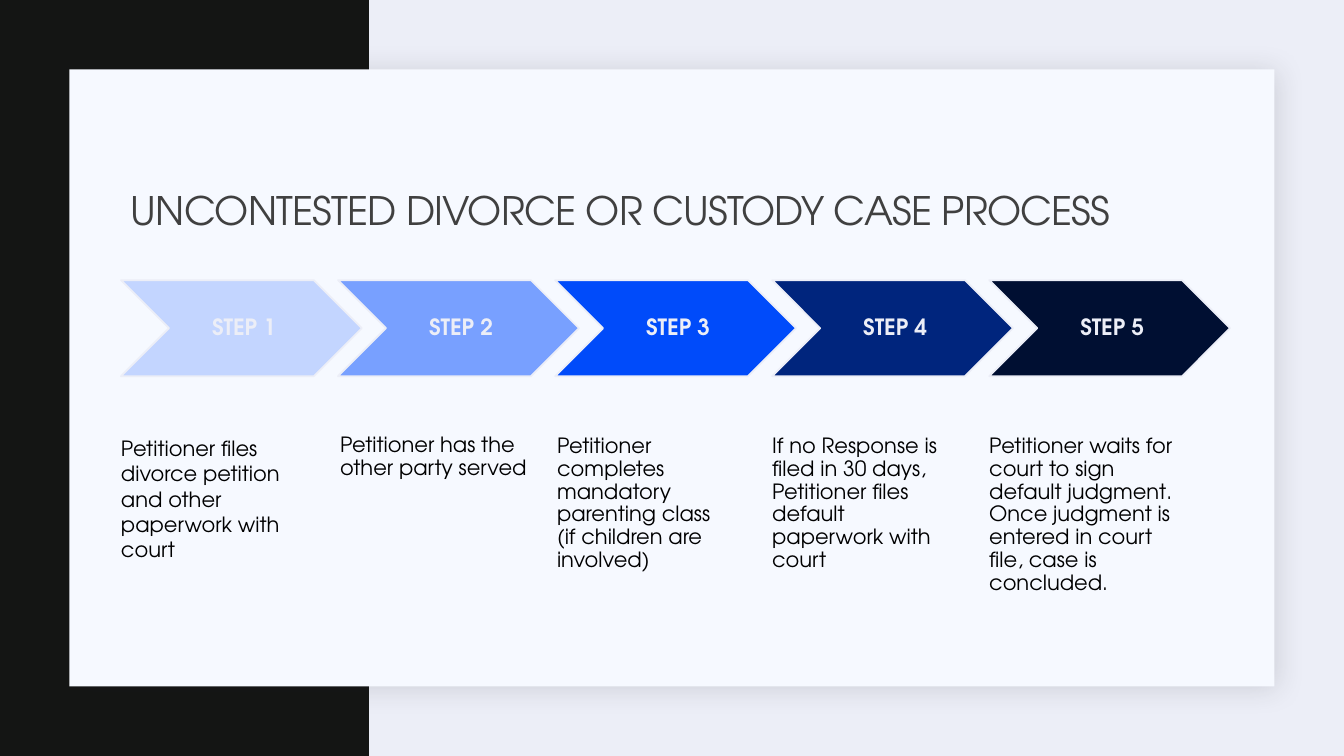
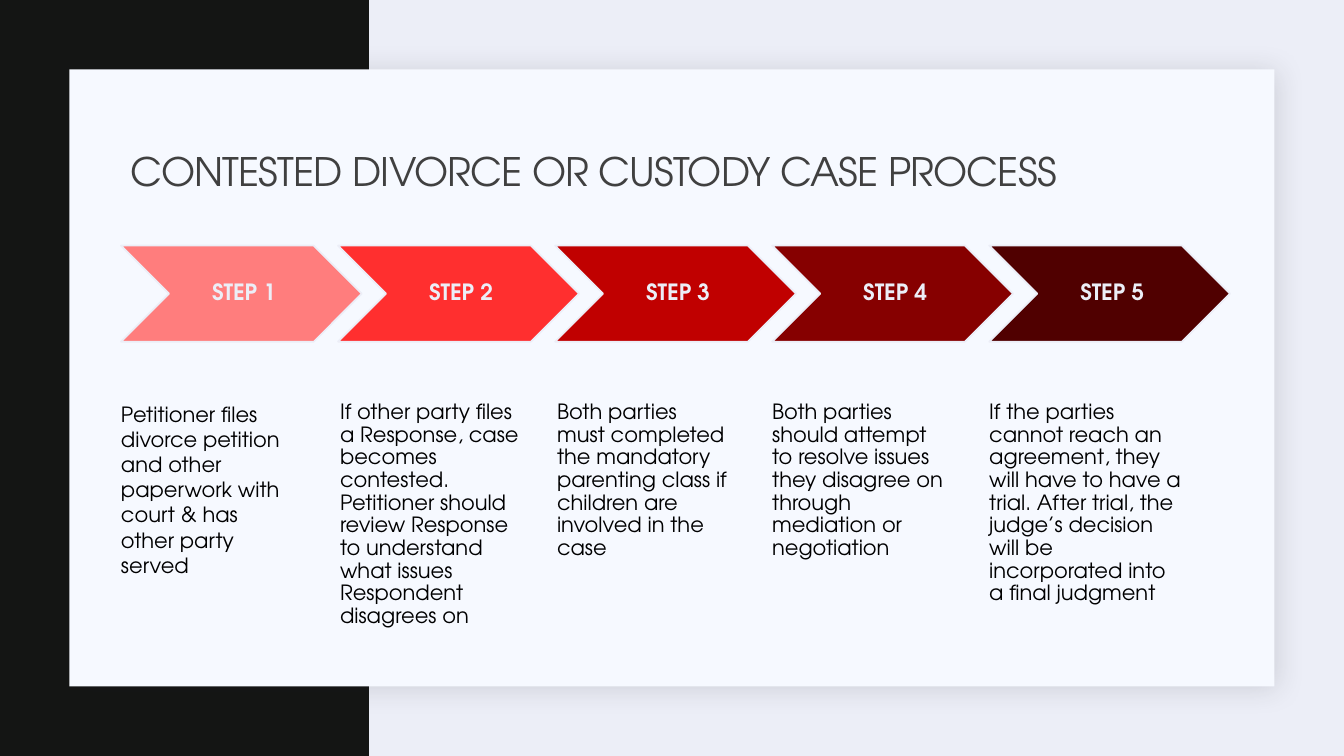
"""Build two slides showing the steps of uncontested and contested family cases."""
from lxml import etree
from pptx import Presentation
from pptx.dml.color import RGBColor
from pptx.enum import shapes, text
from pptx.oxml import ns
from pptx.util import Cm, Pt

FONT = "TeX Gyre Adventor"
BACKGROUND = RGBColor(0xEC, 0xEE, 0xF7)
BAND = RGBColor(0x14, 0x15, 0x14)
CARD = RGBColor(0xF6, 0xF9, 0xFF)
SHADOW = RGBColor(0x1F, 0x21, 0x25)
TITLE = RGBColor(0x40, 0x40, 0x40)
BODY = RGBColor(0, 0, 0)
BLUES = [RGBColor.from_string(c) for c in ("C3D5FF", "78A0FF", "004BFA", "00257D", "000F32")]
REDS = [RGBColor.from_string(c) for c in ("FF7D7D", "FF2F2F", "C00000", "860000", "500000")]

PROCESSES = [
    {
        "title": "UNCONTESTED DIVORCE OR CUSTODY CASE PROCESS",
        "title_top": 4.55,
        "steps_top": 7.06,
        "body_height": 5.31,
        "colours": BLUES,
        "steps": [
            "Petitioner files divorce petition and other paperwork with court",
            "Petitioner has the other party served",
            "Petitioner completes mandatory parenting class (if children are involved)",
            "If no Response is filed in 30 days, Petitioner files default paperwork with court",
            "Petitioner waits for court to sign default judgment. Once judgment is entered "
            "in court file, case is concluded.",
        ],
    },
    {
        "title": "CONTESTED DIVORCE OR CUSTODY CASE PROCESS",
        "title_top": 3.56,
        "steps_top": 6.19,
        "body_height": 7.06,
        "colours": REDS,
        "steps": [
            "Petitioner files divorce petition and other paperwork with court & has "
            "other party served",
            "If other party files a Response, case becomes contested. Petitioner should "
            "review Response to understand what issues Respondent disagrees on",
            "Both parties must completed the mandatory parenting class if children are "
            "involved in the case",
            "Both parties should attempt to resolve issues they disagree on through "
            "mediation or negotiation",
            "If the parties cannot reach an agreement, they will have to have a trial. "
            "After trial, the judge’s decision will be incorporated into a final judgment",
        ],
    },
]

SLIDE_WIDTH, SLIDE_HEIGHT = 33.87, 19.05
BAND_WIDTH = 9.3
CARD_MARGIN = 1.75
LEFT, PITCH = 3.05, 5.47
TITLE_WIDTH, TITLE_HEIGHT = 27.94, 1.63
CHEVRON_WIDTH, CHEVRON_HEIGHT = 6.07, 2.42
BODY_OFFSET, BODY_WIDTH, BODY_INSET = 2.73, 4.85, 1.19
COLUMN_STYLES = [
    {"line_spacing": 1.0, "left": 0, "right": 0.5},
    {"line_spacing": 0.9, "left": 0.05, "right": 0},
    {"line_spacing": 0.9, "left": 0.05, "right": 0.5},
    {"line_spacing": 0.9, "left": 0, "right": 0.5},
    {"line_spacing": 0.9, "left": 0, "right": 0},
]


def add_filled(slide, kind, box, colour):
    shape = slide.shapes.add_shape(kind, *map(Cm, box))
    shape.shadow.inherit = False
    shape.fill.solid()
    shape.fill.fore_color.rgb = colour
    shape.line.fill.background()
    return shape


def add_soft_shadow(shape):
    effects = shape._element.spPr.find(ns.qn("a:effectLst"))
    shadow = etree.SubElement(
        effects, ns.qn("a:outerShdw"), blurRad=str(Pt(20)), dist=str(Pt(2)),
        dir="2700000", algn="tl", rotWithShape="0")
    colour = etree.SubElement(shadow, ns.qn("a:srgbClr"), val=str(SHADOW))
    etree.SubElement(colour, ns.qn("a:alpha"), val="15000")


def write(shape, words, size, colour, line_spacing=0.9, insets=(0.25, 0.13, 0.25, 0.13),
          anchor=text.MSO_ANCHOR.MIDDLE, align=text.PP_ALIGN.LEFT, bold=False):
    frame = shape.text_frame
    frame.text = words
    frame.word_wrap = True
    frame.vertical_anchor = anchor
    (frame.margin_left, frame.margin_top,
     frame.margin_right, frame.margin_bottom) = map(Cm, insets)
    paragraph = frame.paragraphs[0]
    paragraph.alignment = align
    paragraph.line_spacing = line_spacing
    run = paragraph.runs[0]
    run.font.name = FONT
    run.font.size = Pt(size)
    run.font.bold = bold
    run.font.color.rgb = colour
    return run


def add_text(slide, box, *args, **style):
    return write(slide.shapes.add_textbox(*map(Cm, box)), *args, **style)


def add_frame(slide):
    rectangle = shapes.MSO_SHAPE.RECTANGLE
    add_filled(slide, rectangle, (0, 0, BAND_WIDTH, SLIDE_HEIGHT), BAND)
    card_box = (CARD_MARGIN, CARD_MARGIN,
                SLIDE_WIDTH - 2 * CARD_MARGIN, SLIDE_HEIGHT - 2 * CARD_MARGIN)
    add_soft_shadow(add_filled(slide, rectangle, card_box, CARD))


def add_step(slide, index, process):
    left = LEFT + index * PITCH
    top = process["steps_top"]
    chevron = add_filled(slide, shapes.MSO_SHAPE.CHEVRON,
                         (left, top, CHEVRON_WIDTH, CHEVRON_HEIGHT), process["colours"][index])
    chevron.line.color.rgb = BACKGROUND
    chevron.line.width = Pt(1.25)
    write(chevron, f"STEP {index + 1}", 16, BACKGROUND, insets=(0.18, 0.05, 0.05, 0.05),
          align=text.PP_ALIGN.CENTER, bold=True)
    style = COLUMN_STYLES[index]
    add_text(slide, (left, top + BODY_OFFSET, BODY_WIDTH, process["body_height"]),
             process["steps"][index], 15, BODY, line_spacing=style["line_spacing"],
             insets=(style["left"], BODY_INSET, style["right"], 0),
             anchor=text.MSO_ANCHOR.TOP)


def add_process(presentation, process):
    slide = presentation.slides.add_slide(presentation.slide_layouts[6])
    add_frame(slide)
    title = add_text(slide, (LEFT, process["title_top"], TITLE_WIDTH, TITLE_HEIGHT),
                     process["title"], 28, TITLE)
    title._r.get_or_add_rPr().set("spc", "-50")
    for index in range(len(process["steps"])):
        add_step(slide, index, process)


def main():
    presentation = Presentation()
    presentation.slide_width = Cm(SLIDE_WIDTH)
    presentation.slide_height = Cm(SLIDE_HEIGHT)
    background = presentation.slide_master.background.fill
    background.solid()
    background.fore_color.rgb = BACKGROUND
    for process in PROCESSES:
        add_process(presentation, process)
    presentation.save("out.pptx")


if __name__ == "__main__":
    main()
